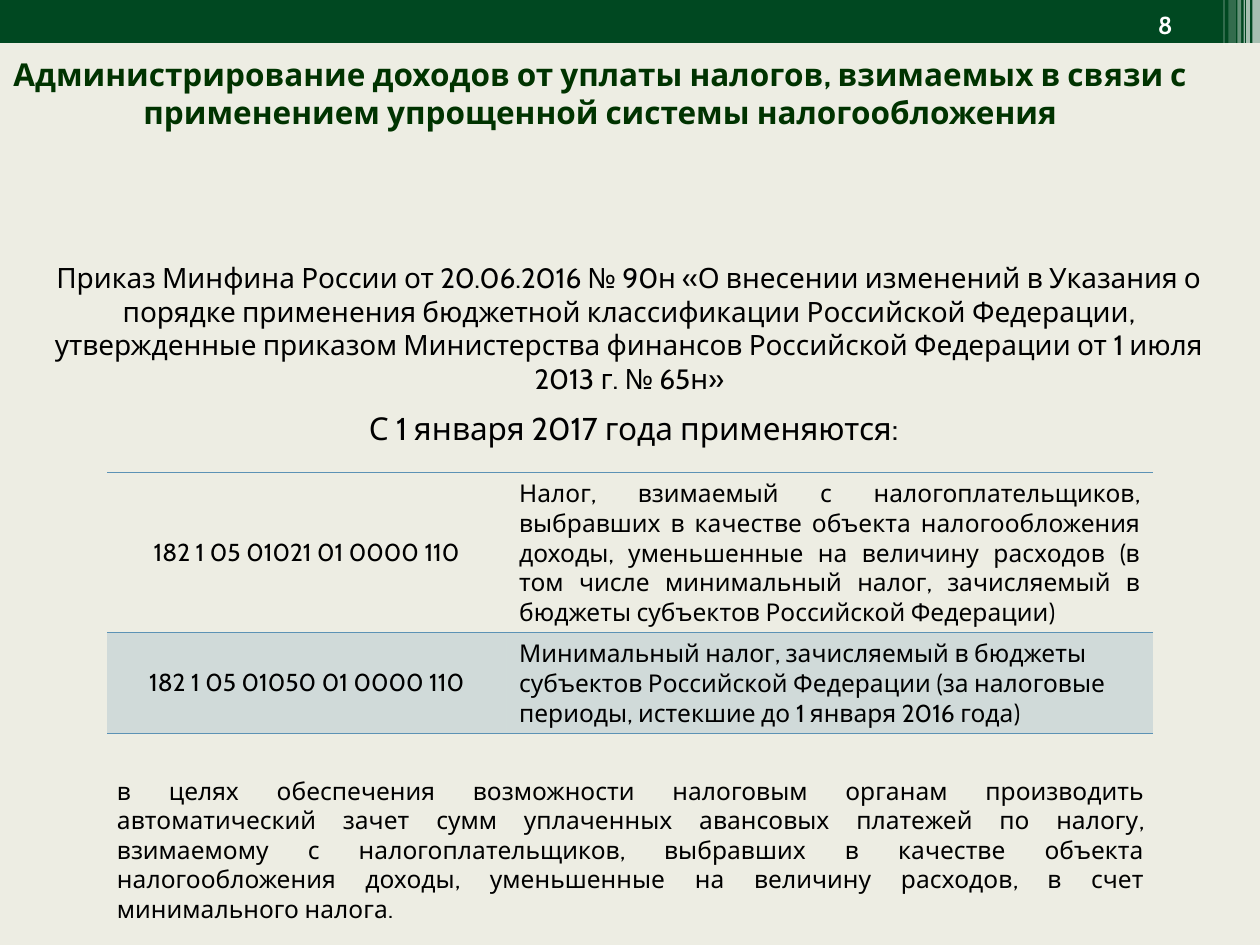
"""Build the slide on budget codes for the simplified taxation system."""
from lxml import etree
from pptx import Presentation
from pptx.dml.color import RGBColor
from pptx.enum.shapes import MSO_SHAPE
from pptx.enum.text import MSO_ANCHOR as ANC, MSO_AUTO_SIZE as FIT, PP_ALIGN as AL
from pptx.oxml.ns import qn
from pptx.util import Inches, Pt

COLORS = {"bg": "EDEDE3", "band": "004821", "title": "003300",
          "white": "FFFFFF", "text": "000000", "blue": "5C92B5"}


def write(tf, text, size=14, color="text", bold=False, align=AL.LEFT):
    p = tf.paragraphs[0]
    p.alignment = align
    r = p.add_run()
    r.text = text
    r.font.name = "Cabin"
    r.font.size = Pt(size)
    r.font.bold = bold
    r.font.color.rgb = RGBColor.from_string(COLORS[color])


def paint(fill, parent, color, alpha=100):
    fill.solid()
    fill.fore_color.rgb = RGBColor.from_string(COLORS[color])
    if alpha < 100:
        clr = parent.find(qn("a:solidFill")).find(qn("a:srgbClr"))
        etree.SubElement(clr, qn("a:alpha"), val=str(alpha * 1000))


prs = Presentation()
prs.slide_width, prs.slide_height = Inches(10), Inches(7.5)
s = prs.slides.add_slide(prs.slide_layouts[5])
s.background.fill.solid()
s.background.fill.fore_color.rgb = RGBColor.from_string(COLORS["bg"])

bars = [(0, 10, 0.34, "band", 100), (9.94, 0.06, 0.34, "white", 65),
        (9.89, 0.03, 0.34, "white", 65), (9.87, 0.01, 0.34, "white", 60),
        (9.82, 0.03, 0.34, "white", 40), (9.75, 0.06, 0.36, "white", 20),
        (9.71, 0.01, 0.36, "white", 30)]
for x, w, h, color, alpha in bars:
    sp = s.shapes.add_shape(MSO_SHAPE.RECTANGLE, Inches(x), 0, Inches(w), Inches(h))
    sp.shadow.inherit = False
    sp.line.fill.background()
    paint(sp.fill, sp._element.spPr, color, alpha)

title = s.shapes.title
title.left, title.top, title.width, title.height = map(Inches, (0, 0.38, 9.53, 0.71))
title.text_frame.auto_size = FIT.NONE
title.text_frame.vertical_anchor = ANC.MIDDLE
write(title.text_frame, "Администрирование доходов от уплаты налогов, взимаемых в связи с "
      "применением упрощенной системы налогообложения",
      size=18, color="title", bold=True, align=AL.CENTER)

boxes = [
    ((9.09, 0.02, 0.41, 0.36), "8", True, ANC.MIDDLE, dict(color="white", bold=True)),
    ((0.31, 2.02, 9.37, 0.91),
     "Приказ Минфина России от 20.06.2016 № 90н «О внесении изменений в Указания о "
     "порядке применения бюджетной классификации Российской Федерации, утвержденные "
     "приказом Министерства финансов Российской Федерации от 1 июля 2013 г. № 65н»",
     True, ANC.TOP, dict(size=16, align=AL.CENTER)),
    ((2.83, 3.2, 4.41, 0.4), "С 1 января 2017 года применяются:",
     False, ANC.TOP, dict(size=18)),
    ((0.83, 6.11, 8.35, 1.04),
     "в целях обеспечения возможности налоговым органам производить автоматический "
     "зачет сумм уплаченных авансовых платежей по налогу, взимаемому с "
     "налогоплательщиков, выбравших в качестве объекта налогообложения доходы, "
     "уменьшенные на величину расходов, в счет минимального налога.",
     True, ANC.TOP, dict(align=AL.JUSTIFY)),
]
for box, text, wrap, anchor, style in boxes:
    tf = s.shapes.add_textbox(*map(Inches, box)).text_frame
    tf.word_wrap = wrap
    tf.vertical_anchor = anchor
    write(tf, text, **style)

rows = [
    ("182 1 05 01021 01 0000 110",
     "Налог, взимаемый с налогоплательщиков, выбравших в качестве объекта "
     "налогообложения доходы, уменьшенные на величину расходов (в том числе "
     "минимальный налог, зачисляемый в бюджеты субъектов Российской Федерации)",
     AL.JUSTIFY, 1.27),
    ("182 1 05 01050 01 0000 110",
     "Минимальный налог, зачисляемый в бюджеты субъектов Российской Федерации "
     "(за налоговые периоды, истекшие до 1 января 2016 года)",
     AL.LEFT, 0.8),
]
frame = s.shapes.add_table(2, 2, Inches(0.85), Inches(3.75), Inches(8.3), Inches(2.07))
table = frame.table
table.first_row = table.horz_banding = False
table._tbl.tblPr.find(qn("a:tableStyleId")).text = "{2D5ABB26-0587-4C30-8999-92F81FD0307C}"
table.columns[0].width, table.columns[1].width = Inches(3.17), Inches(5.13)
for i, (code, name, align, height) in enumerate(rows):
    table.rows[i].height = Inches(height)
    left, right = table.cell(i, 0), table.cell(i, 1)
    left.vertical_anchor = ANC.MIDDLE
    write(left.text_frame, code, align=AL.CENTER)
    write(right.text_frame, name, align=align)
    for cell in (left, right):
        tcPr = cell._tc.get_or_add_tcPr()
        if i == 1:
            paint(cell.fill, tcPr, "blue", 20)
        else:
            cell.fill.background()
        for side in ("a:lnB", "a:lnT"):
            ln = etree.Element(qn(side), w=str(Pt(1)))
            solid = etree.SubElement(ln, qn("a:solidFill"))
            etree.SubElement(solid, qn("a:srgbClr"), val=COLORS["blue"])
            tcPr.insert(0, ln)

prs.save("out.pptx")
